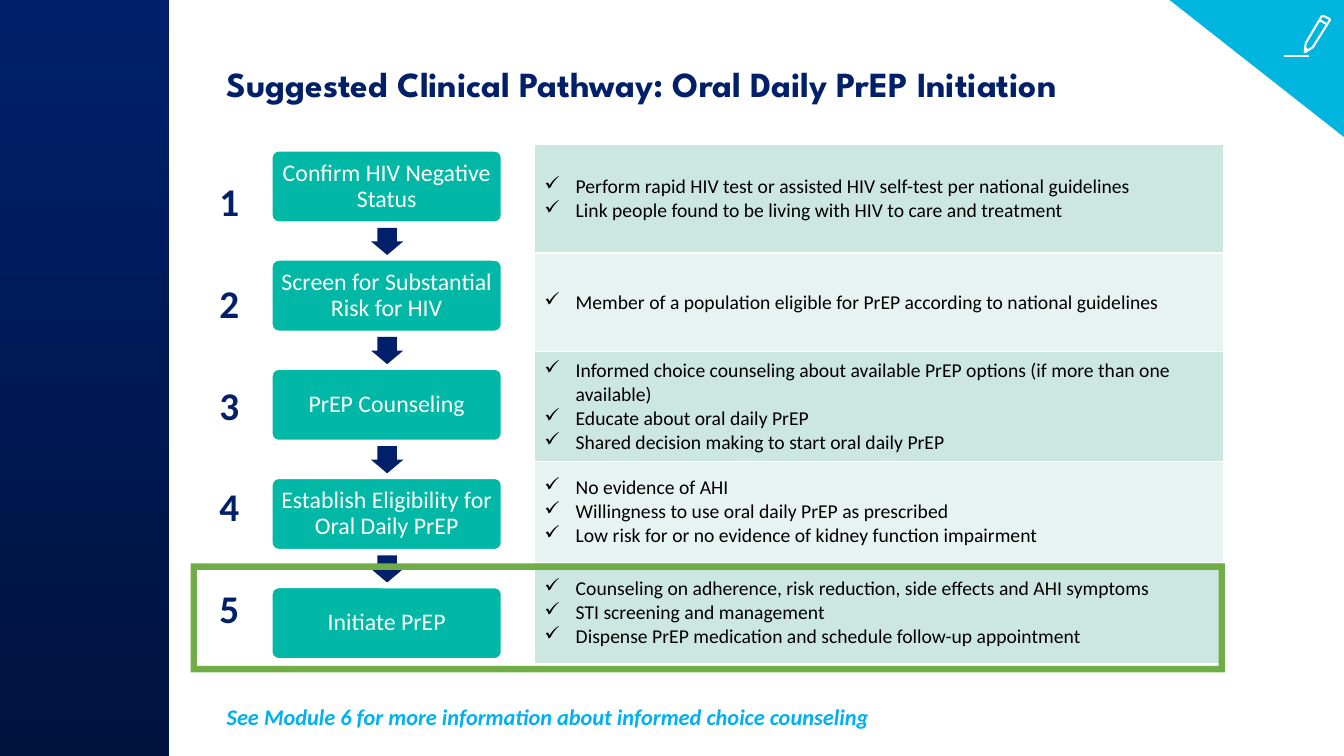
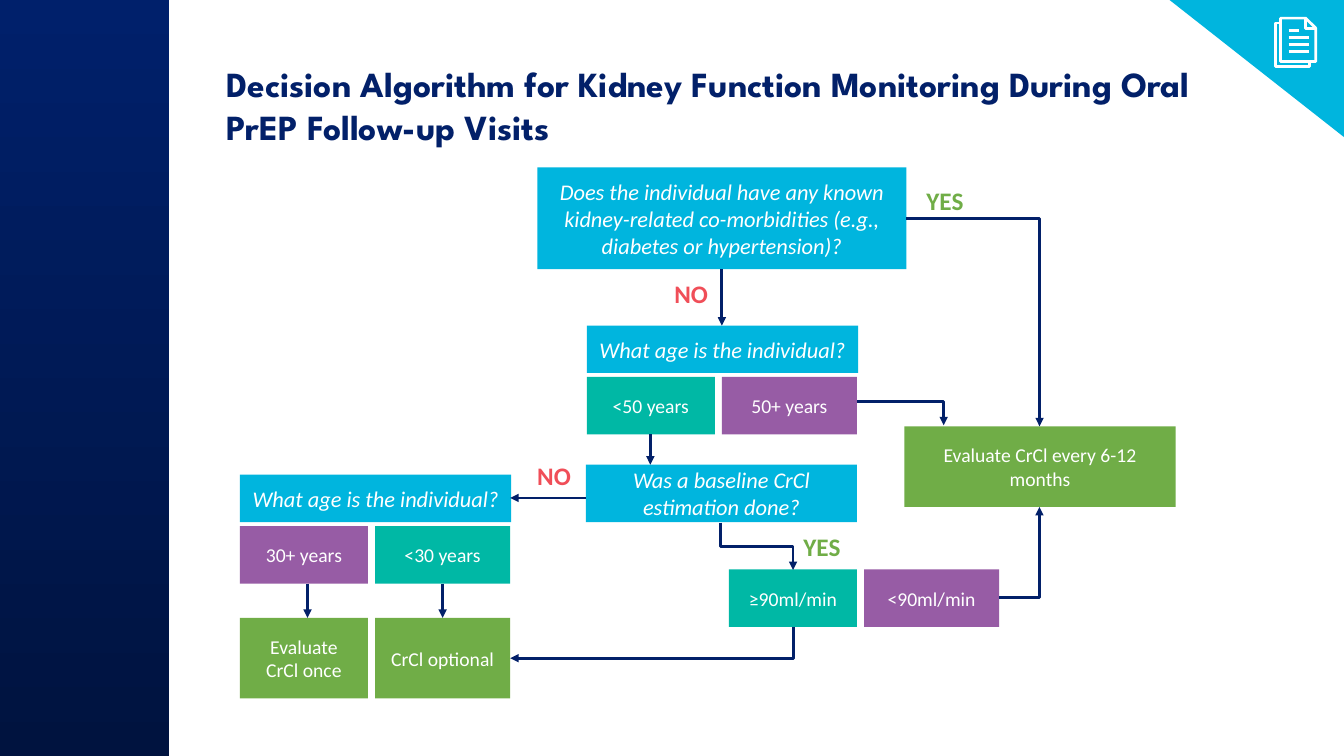
"""Builds two slides on starting oral daily PrEP and monitoring kidney function."""
import pptx
import pptx.util
import pptx.dml.color
import pptx.enum.shapes
import pptx.enum.text
import pptx.oxml
import pptx.oxml.ns

Inches, Pt = pptx.util.Inches, pptx.util.Pt
SHAPE = pptx.enum.shapes.MSO_SHAPE
LINK = pptx.enum.shapes.MSO_CONNECTOR
ANCHOR = pptx.enum.text.MSO_ANCHOR
ALIGN = pptx.enum.text.PP_ALIGN
qn = pptx.oxml.ns.qn

COLORS = {
    "navy": "022069", "deep": "00133F", "band": "00206B", "white": "FFFFFF",
    "black": "000000", "teal": "00B8A5", "cyan": "00B5DE", "sky": "00B0F0",
    "green": "70AD47", "purple": "975CA5", "red": "F04E58",
    "mint": "CCE6E1", "pale": "E7F3F0",
}

TITLES = [
    "Suggested Clinical Pathway: Oral Daily PrEP Initiation",
    "Decision Algorithm for Kidney Function Monitoring During Oral PrEP Follow-up Visits",
]

STEPS = [
    ("Confirm HIV Negative Status", 1.08, [
        "Perform rapid HIV test or assisted HIV self-test per national guidelines",
        "Link people found to be living with HIV to care and treatment"]),
    ("Screen for Substantial Risk for HIV", 0.98, [
        "Member of a population eligible for PrEP according to national guidelines"]),
    ("PrEP Counseling", 1.09, [
        "Informed choice counseling about available PrEP options (if more than one available)",
        "Educate about oral daily PrEP",
        "Shared decision making to start oral daily PrEP"]),
    ("Establish Eligibility for Oral Daily PrEP", 1, [
        "No evidence of AHI",
        "Willingness to use oral daily PrEP as prescribed",
        "Low risk for or no evidence of kidney function impairment"]),
    ("Initiate PrEP", 1, [
        "Counseling on adherence, risk reduction, side effects and AHI symptoms",
        "STI screening and management",
        "Dispense PrEP medication and schedule follow-up appointment"]),
]
NOTE = "See Module 6 for more information about informed choice counseling"

ASKS = [
    ("Does the individual have any known kidney-related co-morbidities "
     "(e.g., diabetes or hypertension)?", 5.33, 1.66, 3.66, 1.01),
    ("What age is the individual?", 5.82, 3.23, 2.69, 0.47),
    ("Was a baseline CrCl\vestimation done?", 5.81, 4.61, 2.69, 0.57),
    ("What age is the individual?", 2.38, 4.71, 2.69, 0.47),
]
PAIRS = [
    (5.82, 3.74, 0.57, [("<50 years", "teal", 1.27), ("50+ years", "purple", 1.34)]),
    (2.38, 5.22, 0.57, [("30+ years", "purple", 1.27), ("<30 years", "teal", 1.34)]),
    (7.23, 5.65, 0.57, [("≥90ml/min", "teal", 1.27), ("<90ml/min", "purple", 1.34)]),
    (2.38, 6.13, 0.8, [(["Evaluate", "CrCl once"], "green", 1.27),
                       ("CrCl optional", "green", 1.34)]),
    (8.97, 4.23, 0.8, [("Evaluate CrCl every 6-12 months", "green", 2.69)]),
]
GAP = 0.07
LABELS = [
    ("NO", "red", 6.59, 2.71), ("YES", "green", 9.09, 1.79),
    ("NO", "red", 5.23, 4.52), ("YES", "green", 7.87, 5.22),
]
DIRECT = [
    (7.16, 2.67, 7.16, 3.23), (6.45, 4.31, 6.45, 4.61), (5.81, 4.94, 5.06, 4.94),
    (3.05, 5.79, 3.05, 6.13), (4.39, 5.79, 4.39, 6.13),
]
CORNERS = [
    (8.99, 2.17, 10.31, 4.23, "tailEnd"), (8.5, 3.98, 9.36, 4.22, "tailEnd"),
    (9.91, 5.93, 10.31, 5.03, "tailEnd"), (5.06, 6.53, 7.87, 6.22, "headEnd"),
]

PENCIL = [
    [(13.02, 0.47), (12.94, 0.52), (12.95, 0.43), (13.11, 0.16), (13.13, 0.16),
     (13.19, 0.19), (13.19, 0.2), (13.02, 0.47)],
    [(13.09, 0.2), (13.16, 0.24)],
    [(12.95, 0.48), (12.97, 0.5)],
    [(12.73, 0.56), (12.98, 0.56)],
]
PAPERS = [
    [(12.7, 0.18), (12.95, 0.18), (13.05, 0.28), (13.05, 0.61), (12.7, 0.61), (12.7, 0.18)],
    [(12.95, 0.18), (12.95, 0.28), (13.05, 0.28)],
    [(12.7, 0.23), (12.65, 0.23), (12.65, 0.66), (12.99, 0.66), (12.99, 0.61)],
    [(12.78, 0.3), (12.88, 0.3)],
] + [[(12.78, y), (12.98, y)] for y in (0.37, 0.44, 0.51)]


def tint(name):
    return pptx.dml.color.RGBColor.from_string(COLORS[name])


def paint(fill, name):
    fill.solid()
    fill.fore_color.rgb = tint(name)


def write(frame, text, size=14, color="white", font="Calibri", bold=False,
          italic=False, align=ALIGN.LEFT, space=None, mark=None):
    """Fill a text frame, one paragraph per item."""
    frame.word_wrap = True
    for i, line in enumerate([text] if isinstance(text, str) else text):
        para = frame.add_paragraph() if i else frame.paragraphs[0]
        para.text = line
        para.alignment = align
        if space:
            para.line_spacing = space
        if mark:
            props = para._p.get_or_add_pPr()
            props.set("marL", str(Inches(0.31)))
            props.set("indent", str(Inches(-0.31)))
            props.append(props.makeelement(qn("a:buChar"), {"char": mark}))
        for run in para.runs:
            run.font.size = Pt(size)
            run.font.name = font
            run.font.bold = bold
            run.font.italic = italic
            run.font.color.rgb = tint(color)


def block(slide, kind, spot, color, edge=None):
    shape = slide.shapes.add_shape(kind, *map(Inches, spot))
    shape.shadow.inherit = False
    paint(shape.fill, color)
    if edge:
        shape.line.color.rgb = tint(edge)
        shape.line.width = Pt(2)
    else:
        shape.line.fill.background()
    return shape


def label(slide, text, spot, **style):
    write(slide.shapes.add_textbox(*map(Inches, spot)).text_frame, text, **style)


def link(slide, ends, kind=LINK.STRAIGHT, color="navy", width=2, tip="tailEnd"):
    line = slide.shapes.add_connector(kind, *map(Inches, ends))
    line.line.color.rgb = tint(color)
    line.line.width = Pt(width)
    if tip:
        stroke = line.line._get_or_add_ln()
        stroke.append(stroke.makeelement(qn("a:" + tip), {"type": "triangle"}))
    props = line.element.spPr
    props.append(props.makeelement(qn("a:effectLst"), {}))
    return line


def sketch(slide, strokes, width):
    for points in strokes:
        if len(points) == 2:
            link(slide, points[0] + points[1], color="white", width=width, tip=None)
            continue
        first, *rest = [tuple(map(Inches, point)) for point in points]
        pen = slide.shapes.build_freeform(*first)
        pen.add_line_segments(rest, close=False)
        shape = pen.convert_to_shape()
        shape.shadow.inherit = False
        shape.fill.background()
        shape.line.color.rgb = tint("white")
        shape.line.width = Pt(width)


def grid(slide, spot, rows):
    table = slide.shapes.add_table(len(rows), 1, *map(Inches, spot)).table
    table.first_row = table.horz_banding = False
    for row, high in zip(table.rows, rows):
        row.height = Inches(high)
    return [row.cells[0] for row in table.rows]


def dress(layout, slide):
    """Put the side band, corner and title place on the layout."""
    band = block(slide, SHAPE.RECTANGLE, (0, 0, 1.68, 7.5), "band")
    band.fill.gradient()
    band.fill.gradient_angle = 90
    for stop, name in zip(band.fill.gradient_stops, ("deep", "band")):
        stop.color.rgb = tint(name)
    corner = block(slide, SHAPE.RIGHT_TRIANGLE, (11.6, 0, 1.73, 1.36), "cyan")
    corner.rotation = 180
    for part in (corner, band):
        layout.shapes.element.insert(2, part.element)
    title = layout.placeholders[0]
    title.left, title.top, title.width, title.height = map(Inches, (2.15, 0.57, 10, 0.92))


def head(slide, text):
    frame = slide.shapes.title.text_frame
    frame.auto_size = pptx.enum.text.MSO_AUTO_SIZE.NONE
    frame.vertical_anchor = ANCHOR.TOP
    write(frame, text, size=25.2, color="navy", font="League Spartan", bold=True)


def pathway(slide):
    pitch = 1.083
    for i, (name, _, _) in enumerate(STEPS):
        top = 1.49 + i * pitch
        box = block(slide, SHAPE.ROUNDED_RECTANGLE, (2.69, top, 2.29, 0.72), "teal", "white")
        box.adjustments[0] = 0.1
        frame = box.text_frame
        frame.margin_left = frame.margin_right = Inches(0.05)
        write(frame, name, size=17, align=ALIGN.CENTER, space=0.9)
        if i < len(STEPS) - 1:
            arrow = block(slide, SHAPE.DOWN_ARROW, (3.68, top + 0.77, 0.32, 0.27), "navy")
            arrow.adjustments[0] = 0.6
    for i, cell in enumerate(grid(slide, (1.93, 1.49, 0.69, 5.05), [1.01] * len(STEPS))):
        cell.fill.background()
        write(cell.text_frame, str(i + 1), size=28, color="navy", bold=True,
              align=ALIGN.CENTER, space=1.5)
    cells = grid(slide, (5.3, 1.43, 6.84, 5.16), [high for _, high, _ in STEPS])
    for i, (cell, (_, _, checks)) in enumerate(zip(cells, STEPS)):
        paint(cell.fill, ("mint", "pale")[i % 2])
        cell.vertical_anchor = ANCHOR.MIDDLE
        write(cell.text_frame, checks, color="black", mark="✓")
    label(slide, NOTE, (2.15, 6.93, 9.67, 0.37), size=16, color="sky", bold=True, italic=True)
    block(slide, SHAPE.FRAME, (1.89, 5.59, 10.26, 1.08), "green").adjustments[0] = 0.059
    sketch(slide, PENCIL, 1.5)


def kidney(slide):
    sketch(slide, PAPERS, 1.9)
    for text, *spot in ASKS:
        box = block(slide, SHAPE.RECTANGLE, spot, "cyan")
        write(box.text_frame, text, size=16, italic=True, align=ALIGN.CENTER)
    for left, top, high, parts in PAIRS:
        for text, color, wide in parts:
            box = block(slide, SHAPE.RECTANGLE, (left, top, wide, high), color)
            write(box.text_frame, text, align=ALIGN.CENTER)
            left += wide + GAP
    for ends in DIRECT:
        link(slide, ends)
    for *ends, tip in CORNERS:
        bend = link(slide, ends, LINK.ELBOW, tip=tip)
        bend.element.spPr.find(qn("a:prstGeom")).set("prst", "bentConnector2")
    step = link(slide, (7.27, 5.06, 7.74, 5.78), LINK.ELBOW)
    turn = step.element.spPr.find(qn("a:xfrm"))
    turn.set("rot", "16200000")
    turn.set("flipH", "1")
    for text, color, left, top in LABELS:
        label(slide, text, (left, top, 0.57, 0.42), size=18, color=color, bold=True)


def main():
    deck = pptx.Presentation()
    deck.slide_width, deck.slide_height = Inches(13.33), Inches(7.5)
    layout = deck.slide_layouts[5]
    slides = [deck.slides.add_slide(layout) for _ in TITLES]
    dress(layout, slides[0])
    for slide, title, fill in zip(slides, TITLES, (pathway, kidney)):
        head(slide, title)
        fill(slide)
    deck.save("out.pptx")


if __name__ == "__main__":
    main()
